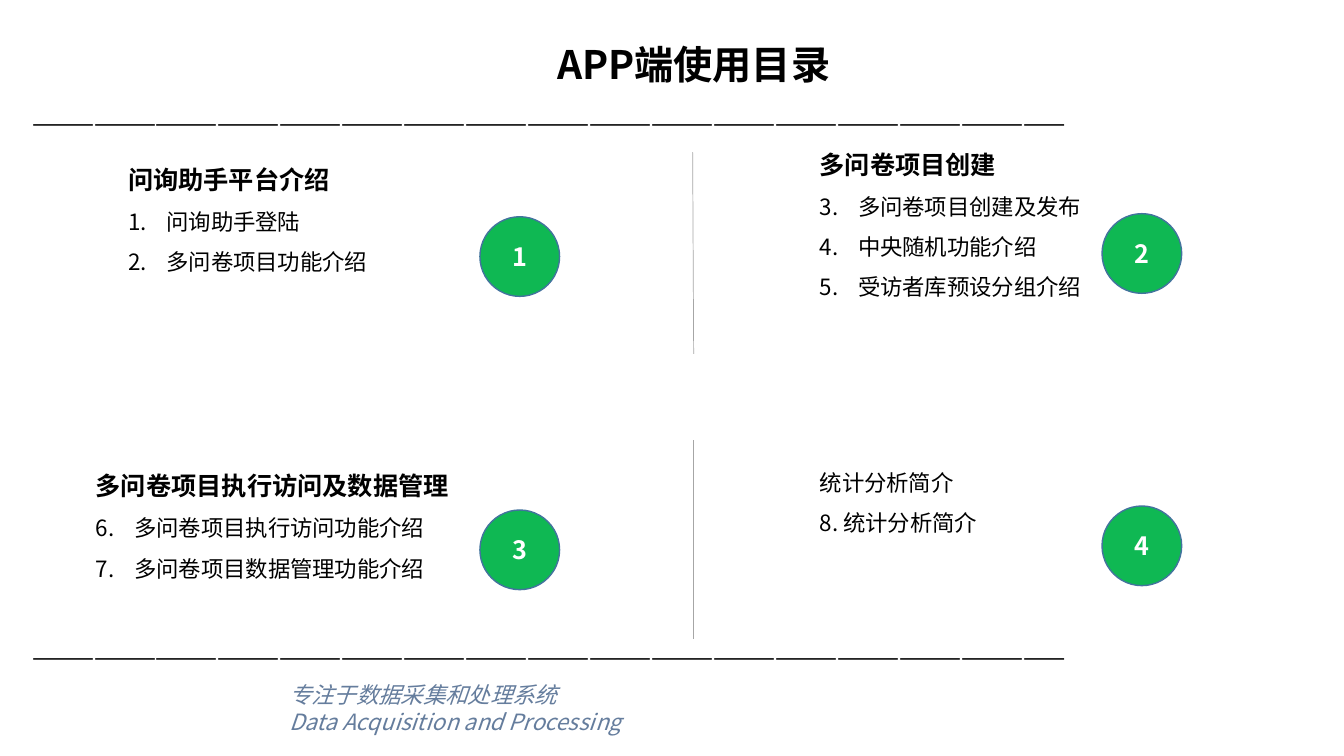
from lxml import etree
from pptx import Presentation, util as u
from pptx.dml.color import RGBColor
from pptx.enum import shapes, text
from pptx.oxml.ns import qn

FONT = "Noto Sans CJK SC"
BLACK, WHITE, GREEN = "000000", "FFFFFF", "0FB853"
OUTLINE, GREY, SLATE = "43739E", "A6A6A6", "657D9D"
BADGE_SIZE = 0.79
INDENT = 0.38

# Box (left, top, width, height), badge corner, heading, first number, items
SECTIONS = [
    ((1.17, 1.43, 2.71, 1.36), (4.76, 2.15), "问询助手平台介绍", 1,
     ["问询助手登陆", "多问卷项目功能介绍"]),
    ((8.03, 1.43, 3.37, 2.42), (10.93, 2.12), "多问卷项目创建", 3,
     ["多问卷项目创建及发布", "中央随机功能介绍", "受访者库预设分组介绍"]),
    ((0.85, 4.47, 3.8, 2.17), (4.76, 5.06), "多问卷项目执行访问及数据管理", 6,
     ["多问卷项目执行访问功能介绍", "多问卷项目数据管理功能介绍"]),
    ((8.03, 4.47, 3.52, 0.91), (10.93, 5.02), "统计分析简介", None,
     ["8. 统计分析简介"]),
]


def color(hex_value):
    return RGBColor.from_string(hex_value)


def apply(target, values):
    for name, value in values.items():
        setattr(target, name, value)


def place(shape, box):
    names = ("left", "top", "width", "height")
    apply(shape, dict(zip(names, map(u.Inches, box))))


def frame_of(shape, **values):
    frame = shape.text_frame
    apply(frame, {"word_wrap": True, "auto_size": text.MSO_AUTO_SIZE.NONE,
                  "vertical_anchor": text.MSO_ANCHOR.TOP, **values})
    return frame


def write(paragraph, words, size, hex_value=BLACK, bold=False, italic=False, **layout):
    apply(paragraph, {"space_before": u.Pt(0), **layout})
    run = paragraph.add_run()
    run.text = words
    apply(run.font, {"size": u.Pt(size), "bold": bold, "italic": italic, "name": FONT})
    run.font.color.rgb = color(hex_value)
    east_asian = etree.SubElement(run.font._element, qn("a:ea"))
    east_asian.set("typeface", FONT)


def set_bullet(paragraph, start=None):
    """Number the paragraph from start, or remove its bullet."""
    properties = paragraph._p.get_or_add_pPr()
    margin = u.Inches(INDENT) if start else 0
    properties.set("marL", str(margin))
    properties.set("indent", str(-margin))
    if start:
        number = etree.SubElement(properties, qn("a:buAutoNum"), type="arabicPeriod")
        if start > 1:
            number.set("startAt", str(start))
    else:
        etree.SubElement(properties, qn("a:buNone"))


def add_title(slide, box):
    title = slide.shapes.title
    place(title, box)
    write(frame_of(title).paragraphs[0], "APP端使用目录", 28, bold=True,
          alignment=text.PP_ALIGN.CENTER)


def add_rule(slide, box):
    rule = slide.shapes.add_textbox(*map(u.Inches, box))
    write(frame_of(rule).paragraphs[0], "—" * 50, 18, line_spacing=1.5)


def add_footer(slide, box):
    footer = slide.shapes.add_textbox(*map(u.Inches, box))
    frame = frame_of(footer)
    write(frame.paragraphs[0], "专注于数据采集和处理系统", 16, SLATE, italic=True)
    write(frame.add_paragraph(), "Data Acquisition and Processing", 16, SLATE, italic=True)


def add_divider(slide, start, end):
    divider = slide.shapes.add_connector(
        shapes.MSO_CONNECTOR.STRAIGHT, *map(u.Inches, start + end))
    divider.line.color.rgb = color(GREY)
    divider.line.width = u.Pt(0.5)
    etree.SubElement(divider._element.spPr, qn("a:effectLst"))


def add_badge(slide, corner, number):
    badge = slide.shapes.add_shape(
        shapes.MSO_SHAPE.FLOWCHART_CONNECTOR,
        *map(u.Inches, (*corner, BADGE_SIZE, BADGE_SIZE)))
    badge.shadow.inherit = False
    badge.fill.solid()
    badge.fill.fore_color.rgb = color(GREEN)
    badge.line.color.rgb = color(OUTLINE)
    badge.line.width = u.Pt(1)
    frame = frame_of(badge, vertical_anchor=text.MSO_ANCHOR.MIDDLE)
    write(frame.paragraphs[0], str(number), 18, WHITE, bold=True,
          alignment=text.PP_ALIGN.CENTER)


def add_section(slide, number, box, corner, heading, start, items):
    body = slide.placeholders[number]
    place(body, box)
    frame = frame_of(body)
    numbered = start is not None
    paragraph = frame.paragraphs[0]
    paragraph.line_spacing = 1.0 if number == 2 else 1.5
    set_bullet(paragraph)
    write(paragraph, heading, 18 if numbered else 16, bold=numbered)
    for item in items:
        paragraph = frame.add_paragraph()
        apply(paragraph, {"line_spacing": 1.5, "space_before": u.Pt(0)})
        set_bullet(paragraph, start)
        write(paragraph, item, 16)
    add_badge(slide, corner, number)


def main():
    presentation = Presentation()
    presentation.slide_width = u.Inches(13.33)
    presentation.slide_height = u.Inches(7.5)
    # The comparison layout has a title and four body placeholders
    slide = presentation.slides.add_slide(presentation.slide_layouts[4])

    # Frame of the page
    add_footer(slide, (2.77, 6.71, 7.01, 0.64))
    for top in (6.16, 0.87):
        add_rule(slide, (0.22, top, 12.96, 0.56))
    add_title(slide, (4.71, 0.35, 4.34, 0.57))

    # Four sections of the contents
    add_divider(slide, (6.88, 4.37), (6.88, 6.34))
    add_divider(slide, (6.88, 3.51), (6.87, 1.51))
    for number, section in enumerate(SECTIONS, 1):
        add_section(slide, number, *section)

    presentation.save("out.pptx")


if __name__ == "__main__":
    main()
